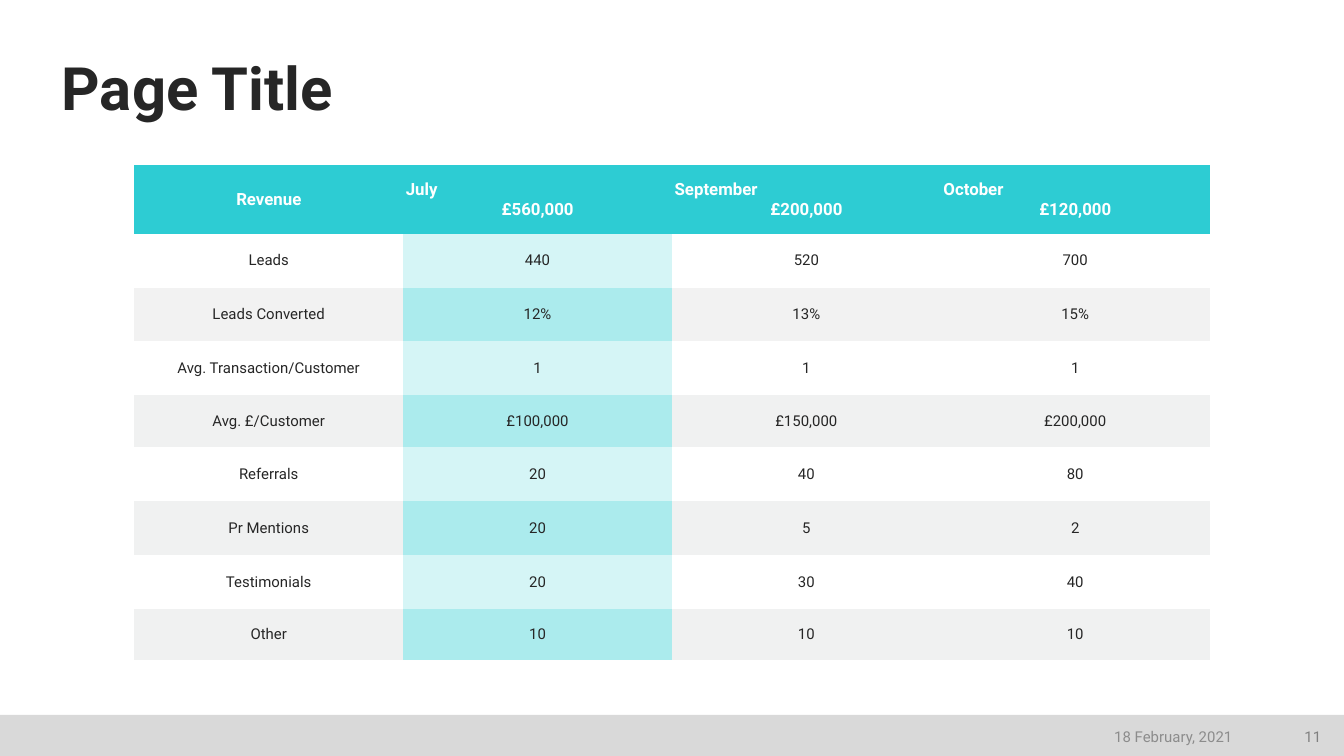
import pptx
import pptx.util
import pptx.dml.color
import pptx.enum.shapes
import pptx.enum.text
import pptx.oxml.ns

Inches, Pt = pptx.util.Inches, pptx.util.Pt
Align = pptx.enum.text.PP_ALIGN
Anchor = pptx.enum.text.MSO_ANCHOR

FONT = "Roboto"
COLORS = {
    "white": "FFFFFF", "dark": "262626", "teal": "2DCCD3",
    "pale": "D5F5F6", "aqua": "ABEBED", "light": "F2F2F2",
    "mist": "F0F1F1", "bar": "D9D9D9", "page": "808080", "date": "8C8C8C",
}
HEADS = ("Revenue", "July\n£560,000", "September\n£200,000", "October\n£120,000")
ROWS = [
    ("Leads", "440", "520", "700"),
    ("Leads Converted", "12%", "13%", "15%"),
    ("Avg. Transaction/Customer", "1", "1", "1"),
    ("Avg. £/Customer", "£100,000", "£150,000", "£200,000"),
    ("Referrals", "20", "40", "80"),
    ("Pr Mentions", "20", "5", "2"),
    ("Testimonials", "20", "30", "40"),
    ("Other", "10", "10", "10"),
]
HEIGHTS = [0.51, 0.4, 0.4, 0.4, 0.39, 0.4, 0.4, 0.4, 0.38]
WIDTH = 2
NO_STYLE = "{2D5ABB26-0587-4C30-8999-92F81FD0307C}"
NOTES = [
    ("11", (9.56, 5.35, 0.37, 0.26), "page"),
    ("18 February, 2021", (7.02, 5.35, 2.25, 0.26), "date"),
]


def paint(fill, color):
    fill.solid()
    fill.fore_color.rgb = pptx.dml.color.RGBColor.from_string(COLORS[color])


def write(para, text, size, color, bold=False, align=Align.LEFT):
    para.alignment = align
    run = para.add_run()
    run.text = text
    run.font.name = FONT
    run.font.size = Pt(size)
    run.font.bold = bold
    paint(run.font.fill, color)


def add_text(slide, box, anchor):
    frame = slide.shapes.add_textbox(*map(Inches, box)).text_frame
    frame.word_wrap = True
    frame.vertical_anchor = anchor
    return frame


def fill_cell(cell, text, size, color, back, bold=False):
    cell.margin_left = cell.margin_right = Inches(0.02)
    cell.margin_top = cell.margin_bottom = Inches(0.02)
    cell.vertical_anchor = Anchor.MIDDLE
    paint(cell.fill, back)
    write(cell.text_frame.paragraphs[0], text, size, color, bold, Align.CENTER)


def pick_back(row, col):
    if col == 1:
        return "aqua" if row % 2 else "pale"
    if row % 2 == 0:
        return "white"
    return "light" if row == 1 else "mist"


def add_grid(slide):
    frame = slide.shapes.add_table(
        len(HEIGHTS), len(HEADS), Inches(1), Inches(1.23),
        Inches(WIDTH * len(HEADS)), Inches(sum(HEIGHTS)))
    grid = frame.table
    grid.horz_banding = False
    grid._tbl.tblPr.find(pptx.oxml.ns.qn("a:tableStyleId")).text = NO_STYLE
    for col in grid.columns:
        col.width = Inches(WIDTH)
    for row, high in zip(grid.rows, HEIGHTS):
        row.height = Inches(high)
    for c, text in enumerate(HEADS):
        fill_cell(grid.cell(0, c), text, 9, "white", "teal", True)
    for r, row in enumerate(ROWS):
        for c, text in enumerate(row):
            fill_cell(grid.cell(r + 1, c), text, 8, "dark", pick_back(r, c))


def main():
    deck = pptx.Presentation()
    deck.slide_width = Inches(10)
    deck.slide_height = deck.slide_width * 9 // 16
    slide = deck.slides.add_slide(deck.slide_layouts[6])

    bar = slide.shapes.add_shape(
        pptx.enum.shapes.MSO_SHAPE.RECTANGLE,
        *map(Inches, (0, 5.32, 10, 0.31)))
    bar.shadow.inherit = False
    paint(bar.fill, "bar")
    bar.line.fill.background()

    title = add_text(slide, (0.46, 0.4, 9.1, 0.52), Anchor.BOTTOM)
    title.margin_left = title.margin_right = 0
    title.margin_top = title.margin_bottom = 0
    title.paragraphs[0].line_spacing = 0.9
    write(title.paragraphs[0], "Page Title", 32, "dark", True)

    add_grid(slide)
    for text, box, color in NOTES:
        note = add_text(slide, box, Anchor.MIDDLE)
        write(note.paragraphs[0], text, 8, color, align=Align.RIGHT)

    deck.save("out.pptx")


if __name__ == "__main__":
    main()
